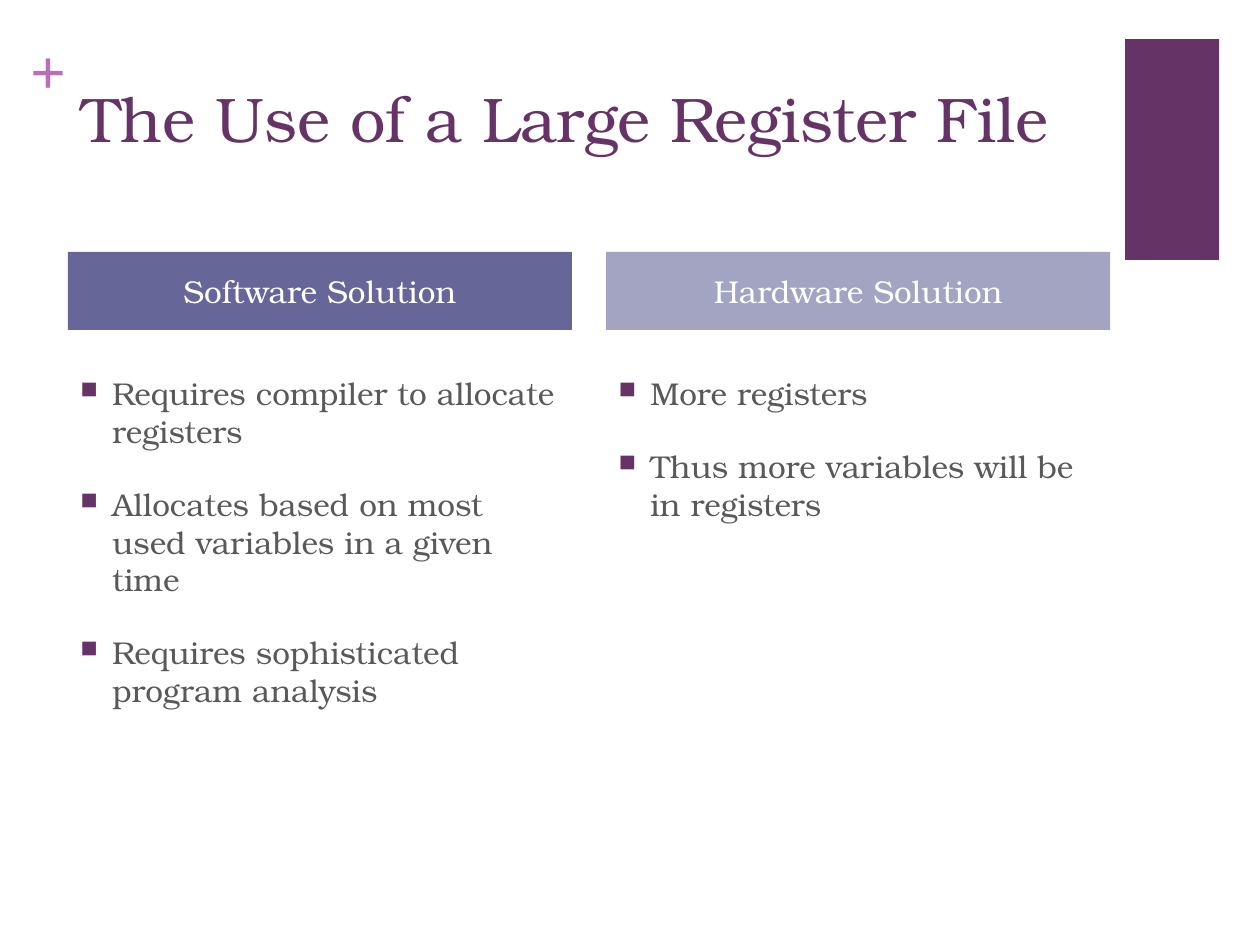
"""Build a slide comparing software and hardware solutions for a large register file."""
from dataclasses import dataclass

import pptx
import pptx.dml.color
import pptx.enum.shapes
import pptx.enum.text
import pptx.oxml
import pptx.util
from pptx.util import Cm


@dataclass(frozen=True)
class Theme:
    font: str = "TeX Gyre Bonum"
    plus_font: str = "Times New Roman"
    plum: str = "663366"
    orchid: str = "B870B8"
    gray: str = "595959"
    white: str = "FFFFFF"
    indigo: str = "666699"
    lavender: str = "A3A3C2"
    title_size: int = 36
    body_size: int = 18


theme = Theme()
rgb = pptx.dml.color.RGBColor.from_string
namespace = "http://schemas.openxmlformats.org/drawingml/2006/main"
bullet_elements = (
    f'<a:buClr xmlns:a="{namespace}"><a:srgbClr val="{theme.plum}"/></a:buClr>',
    f'<a:buSzPct xmlns:a="{namespace}" val="75000"/>',
    f'<a:buChar xmlns:a="{namespace}" char="■"/>',
)


def format_text(text_frame, size, color, font=theme.font, bold=False):
    for paragraph in text_frame.paragraphs:
        for run in paragraph.runs:
            run.font.name = font
            run.font.size = pptx.util.Pt(size)
            run.font.bold = bold
            run.font.color.rgb = rgb(color)


def add_rectangle(left, top, width, height, color):
    shape = slide.shapes.add_shape(
        pptx.enum.shapes.MSO_SHAPE.RECTANGLE, Cm(left), Cm(top), Cm(width), Cm(height)
    )
    shape.shadow.inherit = False
    shape.fill.solid()
    shape.fill.fore_color.rgb = rgb(color)
    shape.line.fill.background()
    return shape


presentation = pptx.Presentation()
presentation.slide_width = Cm(25.4)
presentation.slide_height = Cm(19.05)
slide = presentation.slides.add_slide(presentation.slide_layouts[6])

add_rectangle(22.68, 0.79, 1.9, 4.45, theme.plum)

plus = slide.shapes.add_textbox(Cm(0.61), Cm(0.64), Cm(0.74), Cm(1.55)).text_frame
plus.margin_left = plus.margin_right = plus.margin_top = plus.margin_bottom = 0
plus.text = "+"
format_text(plus, theme.title_size, theme.orchid, theme.plus_font, bold=True)

title = slide.shapes.add_textbox(Cm(1.4), Cm(1.47), Cm(20.98), Cm(2.97)).text_frame
title.word_wrap = True
title.text = "The Use of a Large Register File"
format_text(title, theme.title_size, theme.plum)

columns = [
    ("Software Solution", theme.indigo, [
        "Requires compiler to allocate registers",
        "Allocates based on most used variables in a given time",
        "Requires sophisticated program analysis",
    ]),
    ("Hardware Solution", theme.lavender, [
        "More registers",
        "Thus more variables will be in registers",
    ]),
]
column_left, column_width, column_pitch = 1.37, 10.16, 10.85

for index, (heading, color, points) in enumerate(columns):
    left = column_left + index * column_pitch

    header = add_rectangle(left, 5.08, column_width, 1.57, color).text_frame
    header.margin_top = header.margin_bottom = 0
    header.vertical_anchor = pptx.enum.text.MSO_ANCHOR.MIDDLE
    header.text = heading
    header.paragraphs[0].alignment = pptx.enum.text.PP_ALIGN.CENTER
    format_text(header, theme.body_size, theme.white)

    body = slide.shapes.add_textbox(Cm(left), Cm(7.42), Cm(column_width), Cm(9.6)).text_frame
    body.word_wrap = True
    body.text = "\n".join(points)
    for position, paragraph in enumerate(body.paragraphs):
        properties = paragraph._p.get_or_add_pPr()
        properties.set("marL", str(Cm(0.64)))
        properties.set("indent", str(-Cm(0.64)))
        for element in bullet_elements:
            properties.append(pptx.oxml.parse_xml(element))
        if position:
            paragraph.space_before = pptx.util.Pt(20)
    format_text(body, theme.body_size, theme.gray)

presentation.save("out.pptx")
